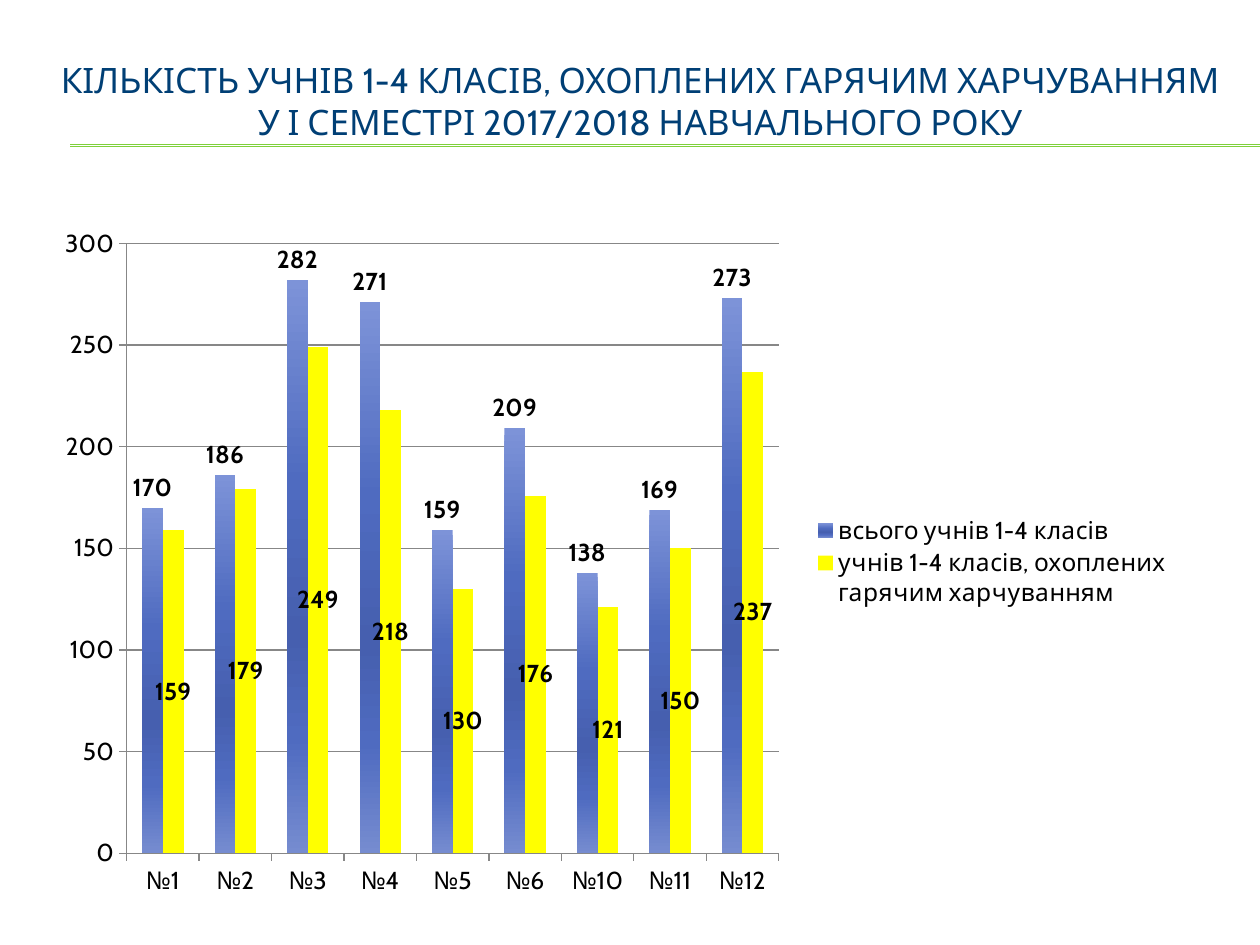
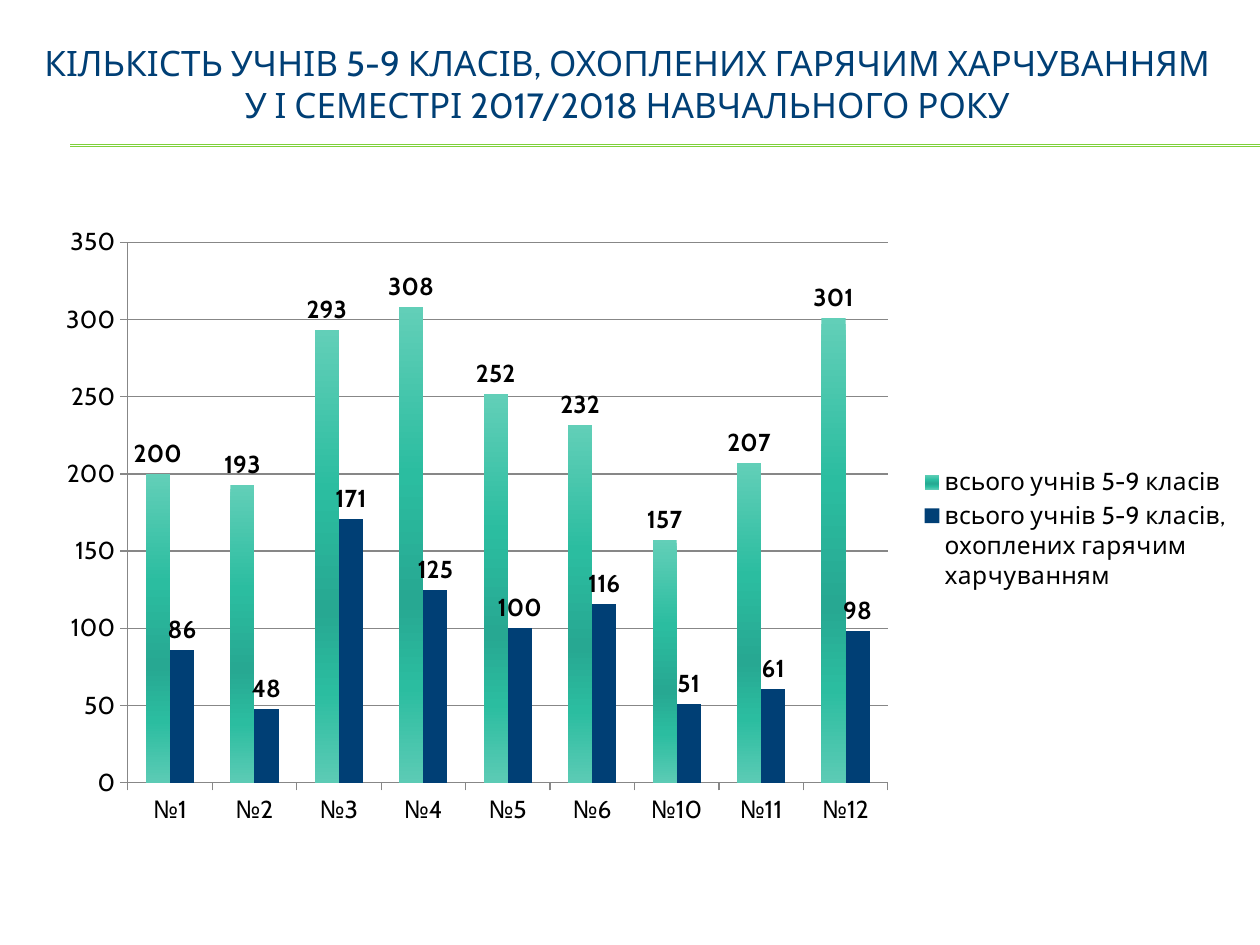
from pptx import Presentation
from pptx.chart.data import CategoryChartData
from pptx.dml.color import RGBColor
from pptx.enum.chart import XL_CHART_TYPE, XL_LABEL_POSITION, XL_LEGEND_POSITION, XL_TICK_MARK
from pptx.enum.shapes import MSO_CONNECTOR
from pptx.enum.text import MSO_ANCHOR, PP_ALIGN
from pptx.oxml import parse_xml
from pptx.oxml.ns import nsdecls, qn
from pptx.util import Cm, Pt

COLUMN = XL_CHART_TYPE.COLUMN_CLUSTERED
ABOVE = XL_LABEL_POSITION.OUTSIDE_END
CENTER = XL_LABEL_POSITION.CENTER
RIGHT = XL_LEGEND_POSITION.RIGHT
TICK_OUT = XL_TICK_MARK.OUTSIDE
STRAIGHT = MSO_CONNECTOR.STRAIGHT
MIDDLE = MSO_ANCHOR.MIDDLE
MID_ALIGN = PP_ALIGN.CENTER

FONT = "Cabin"
NAVY, GREEN, YELLOW, BLACK, GRAY = "003F75", "7FD13B", "FFFF00", "000000", "878787"
BLUES = ("7D93D8", "4F6BC0", "465FAF", "4F6BC0", "768CD0")
TEALS = ("62CFB8", "2BBDA0", "27A892", "2BBDA0", "5CCBB5")
STOPS = (0, 35, 62, 80, 100)
SCHOOLS = ("№1", "№2", "№3", "№4", "№5", "№6", "№10", "№11", "№12")

SLIDES = (
    dict(
        grades="1-4",
        title_box=(0.84, 1.17, 24.13, 1.73),
        chart_box=(0.84, 4.32, 22.86, 14.02),
        plot_box=(0.075, 0.042, 0.575, 0.877),
        key_box=(0.676, 0.43, 0.324, 0.14),
        top=300,
        series=(
            ("всього учнів 1-4 класів",
             (170, 186, 282, 271, 159, 209, 138, 169, 273), BLUES, ABOVE),
            ("учнів 1-4 класів, охоплених гарячим харчуванням",
             (159, 179, 249, 218, 130, 176, 121, 150, 237), YELLOW, CENTER),
        ),
    ),
    dict(
        grades="5-9",
        title_box=(0.3, 0.53, 24.69, 2.29),
        chart_box=(0.84, 4.32, 24.13, 12.57),
        plot_box=(0.072, 0.045, 0.635, 0.867),
        key_box=(0.731, 0.4, 0.265, 0.21),
        top=350,
        series=(
            ("всього учнів 5-9 класів",
             (200, 193, 293, 308, 252, 232, 157, 207, 301), TEALS, ABOVE),
            ("всього учнів 5-9 класів, охоплених гарячим харчуванням",
             (86, 48, 171, 125, 100, 116, 51, 61, 98), NAVY, ABOVE),
        ),
    ),
)


def color(code):
    """Turn a hex string into a colour."""
    return RGBColor.from_string(code)


def style(font, size, code, bold=False):
    """Set the shared typeface with a size, colour and weight."""
    font.name, font.size, font.bold = FONT, Pt(size), bold
    font.color.rgb = color(code)


def stroke(line, code):
    """Give a line its colour and the common thin width."""
    line.color.rgb = color(code)
    line.width = Pt(0.75)


def add_rule(slide, y):
    """Draw a green rule that runs to the right edge."""
    rule = slide.shapes.add_connector(STRAIGHT, Cm(1.42), Cm(y), Cm(25.4), Cm(y))
    stroke(rule.line, GREEN)
    rule._element.spPr.append(parse_xml(f"<a:effectLst {nsdecls('a')}/>"))


def add_title(slide, box, grades):
    """Add the two-line slide title."""
    frame = slide.shapes.add_textbox(*map(Cm, box)).text_frame
    frame.word_wrap = True
    frame.vertical_anchor = MIDDLE
    para = frame.paragraphs[0]
    para.alignment = MID_ALIGN
    lines = (f"КІЛЬКІСТЬ УЧНІВ {grades} КЛАСІВ, ОХОПЛЕНИХ ГАРЯЧИМ ХАРЧУВАННЯМ",
             "У І СЕМЕСТРІ 2017/2018 НАВЧАЛЬНОГО РОКУ")
    for i, text in enumerate(lines):
        if i:
            para.add_line_break()
        run = para.add_run()
        run.text = text
        style(run.font, 20, NAVY)


def make_layout(box, inner=False):
    """Build a manual chart layout from fractions of the chart."""
    target = '<c:layoutTarget val="inner"/>' if inner else ""
    modes = "".join(f'<c:{side}Mode val="edge"/>' for side in "xy")
    sizes = "".join(f'<c:{key} val="{val}"/>' for key, val in zip("xywh", box))
    return parse_xml(f"<c:layout {nsdecls('c')}><c:manualLayout>"
                     f"{target}{modes}{sizes}</c:manualLayout></c:layout>")


def place_parts(chart, plot_box, key_box):
    """Place the plot area and the legend."""
    area = chart._chartSpace.chart.plotArea
    for old in area.findall(qn("c:layout")):
        area.remove(old)
    area.insert(0, make_layout(plot_box, inner=True))
    key = chart.legend._element
    for old in key.findall(qn("c:layout")):
        key.remove(old)
    key.find(qn("c:legendPos")).addnext(make_layout(key_box))


def paint(series, fill):
    """Fill a series with one colour or a vertical blend."""
    if isinstance(fill, str):
        series.format.fill.solid()
        series.format.fill.fore_color.rgb = color(fill)
        return
    stops = "".join(f'<a:gs pos="{pos * 1000}"><a:srgbClr val="{color(code)}"/></a:gs>'
                    for pos, code in zip(STOPS, fill))
    series._element.get_or_add_spPr().append(parse_xml(
        f"<a:gradFill {nsdecls('a')}><a:gsLst>{stops}</a:gsLst>"
        '<a:lin ang="5400000" scaled="0"/></a:gradFill>'))


def add_labels(series, place):
    """Show bold values on a series."""
    labels = series.data_labels
    labels.show_value = True
    labels.position = place
    style(labels.font, 14, BLACK, bold=True)


def style_axes(chart, top):
    """Set scale, ticks and grid lines."""
    for axis in (chart.category_axis, chart.value_axis):
        axis.major_tick_mark = TICK_OUT
        stroke(axis.format.line, GRAY)
    scale = chart.value_axis
    scale.minimum_scale, scale.maximum_scale, scale.major_unit = 0, top, 50
    scale.has_major_gridlines = True
    stroke(scale.major_gridlines.format.line, GRAY)


def add_columns(slide, page):
    """Add the column chart of pupils by school."""
    data = CategoryChartData()
    data.categories = SCHOOLS
    for name, vals, _, _ in page["series"]:
        data.add_series(name, vals)
    chart = slide.shapes.add_chart(COLUMN, *map(Cm, page["chart_box"]), data).chart
    style(chart.font, 14, BLACK)
    chart.has_title = False
    chart.has_legend = True
    chart.legend.position = RIGHT
    chart.legend.include_in_layout = False
    style_axes(chart, page["top"])
    plot = chart.plots[0]
    plot.gap_width, plot.overlap, plot.vary_by_categories = 150, 0, False
    for series, (_, _, fill, place) in zip(plot.series, page["series"]):
        series.invert_if_negative = False
        paint(series, fill)
        add_labels(series, place)
    place_parts(chart, page["plot_box"], page["key_box"])


def main():
    """Build both slides and save the deck."""
    deck = Presentation()
    deck.slide_width, deck.slide_height = Cm(25.4), Cm(19.05)
    for page in SLIDES:
        slide = deck.slides.add_slide(deck.slide_layouts[6])
        for y in (2.92, 2.95):
            add_rule(slide, y)
        add_title(slide, page["title_box"], page["grades"])
        add_columns(slide, page)
    deck.save("out.pptx")


if __name__ == "__main__":
    main()
